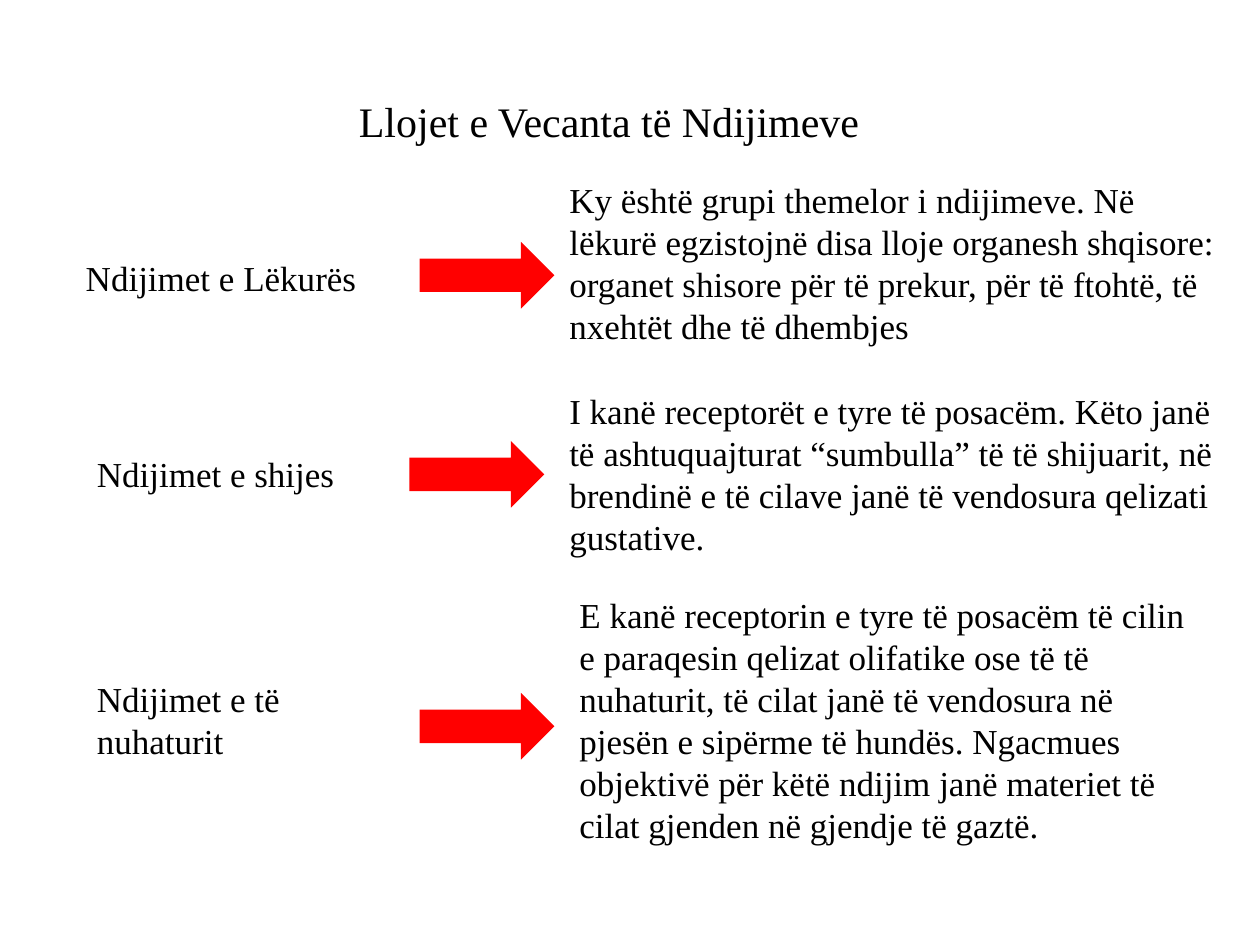
from dataclasses import dataclass

from pptx import Presentation
from pptx import util as u
from pptx.dml.color import RGBColor
from pptx.enum import shapes, text


@dataclass(frozen=True)
class Theme:
    font: str = "Times New Roman"
    ink: str = "000000"
    arrow: str = "FF0000"
    title_size: int = 24
    body_size: int = 20


THEME = Theme()
ARROW_SIZE = (1.07, 0.53)
CENTER = text.PP_ALIGN.CENTER
LEFT = text.PP_ALIGN.LEFT

# Boxes are (left, top, width, height) in inches.
TITLE = ("Llojet e Vecanta të Ndijimeve", (1, 0.67, 7.67, 0.58))
SENSATIONS = [
    {
        "name": "Ndijimet e Lëkurës",
        "name_box": (0.17, 1.83, 3.17, 0.75),
        "name_align": CENTER,
        "arrow_at": (3.33, 1.92),
        "description": "Ky është grupi themelor i ndijimeve. Në lëkurë egzistojnë "
                       "disa lloje organesh shqisore: organet shisore për të prekur, "
                       "për të ftohtë, të nxehtët dhe të dhembjes",
        "description_box": (4.42, 1.5, 5.42, 1.17),
    },
    {
        "name": "Ndijimet e shijes",
        "name_box": (0.67, 3.42, 2.5, 0.67),
        "name_align": LEFT,
        "arrow_at": (3.25, 3.5),
        "description": "I kanë receptorët e tyre të posacëm. Këto janë të "
                       "ashtuquajturat “sumbulla” të të shijuarit, në brendinë e të "
                       "cilave janë të vendosura qelizati gustative.",
        "description_box": (4.42, 3.17, 5.33, 1.17),
    },
    {
        "name": "Ndijimet e të nuhaturit",
        "name_box": (0.67, 5.42, 2.33, 0.58),
        "name_align": LEFT,
        "arrow_at": (3.33, 5.5),
        "description": "E kanë receptorin e tyre të posacëm të cilin e paraqesin "
                       "qelizat olifatike ose të të nuhaturit, të cilat janë të "
                       "vendosura në pjesën e sipërme të hundës. Ngacmues objektivë "
                       "për këtë ndijim janë materiet të cilat gjenden në gjendje "
                       "të gaztë.",
        "description_box": (4.5, 4.75, 5.08, 1.92),
    },
]


def add_text(slide, content, box, size=THEME.body_size, align=LEFT):
    shape = slide.shapes.add_textbox(*map(u.Inches, box))
    frame = shape.text_frame
    frame.word_wrap = True
    frame.vertical_anchor = text.MSO_ANCHOR.MIDDLE
    paragraph = frame.paragraphs[0]
    paragraph.alignment = align
    run = paragraph.add_run()
    run.text = content
    run.font.name = THEME.font
    run.font.size = u.Pt(size)
    run.font.color.rgb = RGBColor.from_string(THEME.ink)


def add_arrow(slide, position):
    shape = slide.shapes.add_shape(
        shapes.MSO_SHAPE.RIGHT_ARROW, *map(u.Inches, position + ARROW_SIZE))
    shape.shadow.inherit = False
    shape.fill.solid()
    shape.fill.fore_color.rgb = RGBColor.from_string(THEME.arrow)
    shape.line.fill.background()


def main():
    presentation = Presentation()
    presentation.slide_width = u.Inches(10)
    presentation.slide_height = u.Inches(7.5)
    slide = presentation.slides.add_slide(presentation.slide_layouts[6])

    add_text(slide, *TITLE, size=THEME.title_size, align=CENTER)
    for sensation in SENSATIONS:
        add_text(slide, sensation["name"], sensation["name_box"],
                 align=sensation["name_align"])
        add_arrow(slide, sensation["arrow_at"])
        add_text(slide, sensation["description"], sensation["description_box"])

    presentation.save("out.pptx")


if __name__ == "__main__":
    main()
